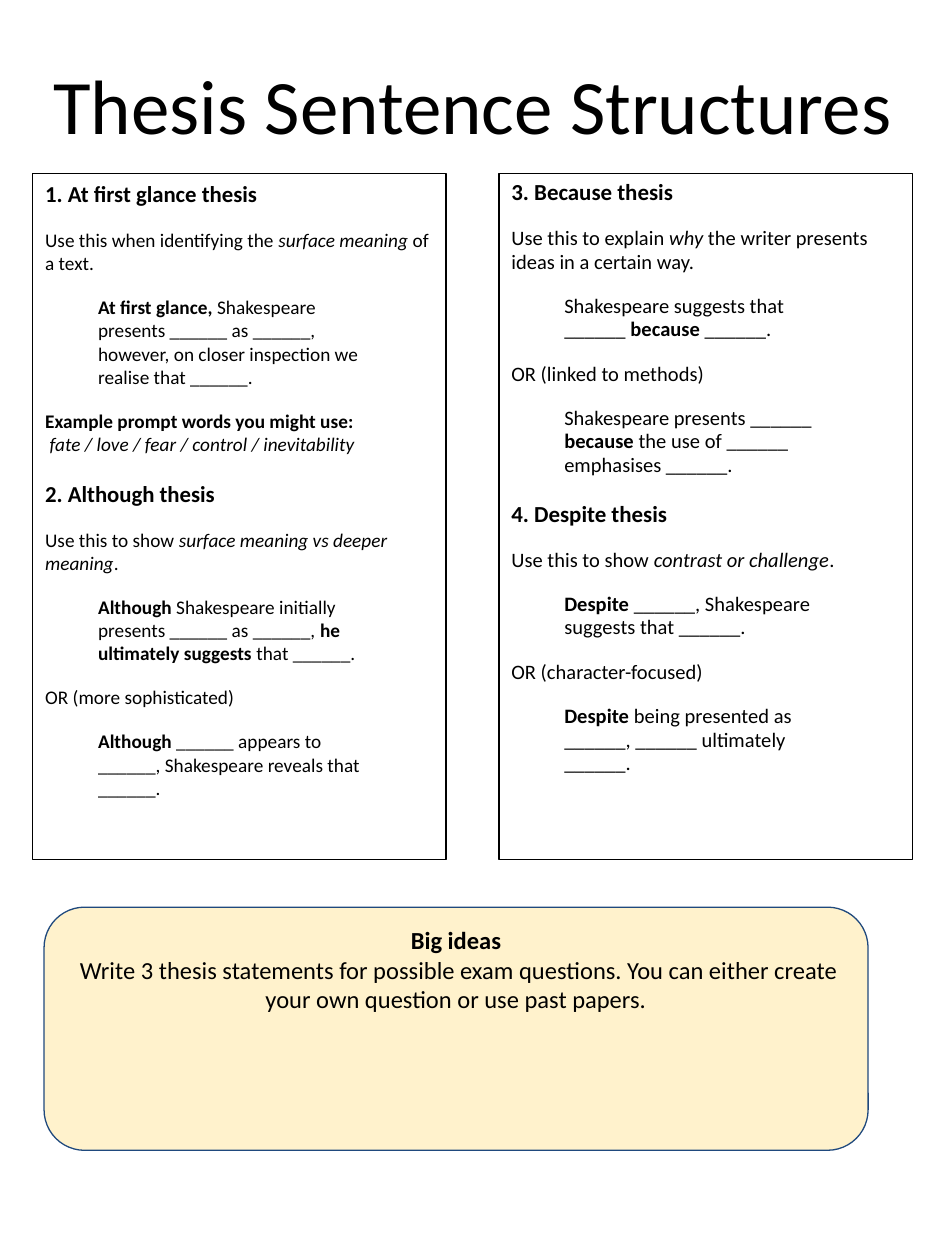
from pptx import Presentation, util as u
from pptx.dml.color import RGBColor
from pptx.enum import shapes, text

FONT = "Calibri"
BLACK = "000000"

AT_FIRST_AND_ALTHOUGH = [
    ("heading", "1. At first glance thesis"),
    ("body", "Use this when identifying the *surface meaning* of a text."),
    ("quote", "**At first glance,** Shakespeare presents ______ as ______, "
              "however, on closer inspection we realise that ______."),
    ("body", "**Example prompt words you might use:\n **"
             "*fate / love / fear / control / inevitability*"),
    ("heading", "2. Although thesis"),
    ("body", "Use this to show *surface meaning vs deeper meaning*."),
    ("quote", "**Although** Shakespeare initially presents ______ as ______, "
              "**he ultimately suggests** that ______."),
    ("body", "OR (more sophisticated)"),
    ("quote", "**Although** ______ appears to ______, Shakespeare reveals that ______."),
]
BECAUSE_AND_DESPITE = [
    ("heading", "3. Because thesis"),
    ("body", "Use this to explain *why* the writer presents ideas in a certain way."),
    ("quote", "Shakespeare suggests that ______ **because** ______."),
    ("body", "OR (linked to methods)"),
    ("quote", "Shakespeare presents ______ **because** the use of ______ emphasises ______."),
    ("heading", "4. Despite thesis"),
    ("body", "Use this to show *contrast or challenge*."),
    ("quote", "**Despite** ______, Shakespeare suggests that ______."),
    ("body", "OR (character-focused)"),
    ("quote", "**Despite** being presented as ______, ______ ultimately ______."),
]


def color(value):
    """Turn a hex string into a colour."""
    return RGBColor.from_string(value)


def style(run, size, bold=False, italic=False):
    """Format one run in the slide's font."""
    run.font.name = FONT
    run.font.size = u.Pt(size)
    run.font.bold = bold
    run.font.italic = italic
    run.font.color.rgb = color(BLACK)


def write(paragraph, marked, size, bold=False):
    """Write text in which ** marks bold and * marks italic."""
    for i, chunk in enumerate(marked.split("**")):
        for j, piece in enumerate(chunk.split("*")):
            for k, line in enumerate(piece.split("\n")):
                if k:
                    paragraph.add_line_break()
                if line:
                    run = paragraph.add_run()
                    run.text = line
                    style(run, size, bold or i % 2 == 1, j % 2 == 1)


def add_panel(slide, kind, box, line):
    """Add an outlined shape without fill or shadow."""
    panel = slide.shapes.add_shape(kind, *map(u.Inches, box))
    panel.shadow.inherit = False
    panel.fill.background()
    panel.line.color.rgb = color(line)
    panel.line.width = u.Pt(0.75)
    panel.text_frame.word_wrap = True
    panel.text_frame.vertical_anchor = text.MSO_ANCHOR.TOP
    return panel


def add_title(slide, box):
    """Place the centred slide title."""
    frame = slide.shapes.add_textbox(*map(u.Inches, box)).text_frame
    frame.word_wrap = True
    frame.vertical_anchor = text.MSO_ANCHOR.MIDDLE
    heading = frame.paragraphs[0]
    heading.alignment = text.PP_ALIGN.CENTER
    write(heading, "Thesis Sentence Structures", 44)


def add_thesis_column(slide, box, entries, heading_size, body_size, spacing):
    """Place a bordered column of thesis patterns."""
    frame = add_panel(slide, shapes.MSO_SHAPE.RECTANGLE, box, BLACK).text_frame
    for i, (role, marked) in enumerate(entries):
        entry = frame.add_paragraph() if i else frame.paragraphs[0]
        is_heading = role == "heading"
        indent = u.Inches(0.42 if role == "quote" else 0)
        entry.alignment = text.PP_ALIGN.LEFT
        entry.line_spacing = spacing
        entry.space_before = u.Pt(14 if is_heading else 12)
        for side in ("marL", "marR"):
            entry._p.get_or_add_pPr().set(side, str(indent))
        write(entry, marked, heading_size if is_heading else body_size, is_heading)


def add_big_ideas(slide, box):
    """Place the rounded task box with its instructions inside the top edge."""
    task = add_panel(slide, shapes.MSO_SHAPE.ROUNDED_RECTANGLE, box, "1F497D")
    task.fill.solid()
    task.fill.fore_color.rgb = color("FFF2CC")
    frame = task.text_frame
    frame.margin_top = u.Inches(0.05)
    frame.text = ("Big ideas\n Write 3 thesis statements for possible exam questions. "
                  "You can either create your own question or use past papers.")
    for i, paragraph in enumerate(frame.paragraphs):
        paragraph.alignment = text.PP_ALIGN.CENTER
        style(paragraph.runs[0], 14, bold=i == 0)


def main():
    """Build and save the slide."""
    deck = Presentation()
    deck.slide_width, deck.slide_height = u.Inches(7.5), u.Inches(10)
    slide = deck.slides.add_slide(deck.slide_layouts[6])
    add_title(slide, (0.26, 0.27, 6.99, 1.11))
    add_thesis_column(slide, (0.26, 1.38, 3.28, 5.44), AT_FIRST_AND_ALTHOUGH, 13, 11, 1.0)
    add_thesis_column(slide, (3.96, 1.38, 3.28, 5.44), BECAUSE_AND_DESPITE, 13.1, 11.7, 0.95)
    add_big_ideas(slide, (0.35, 7.2, 6.54, 1.93))
    deck.save("out.pptx")


if __name__ == "__main__":
    main()
